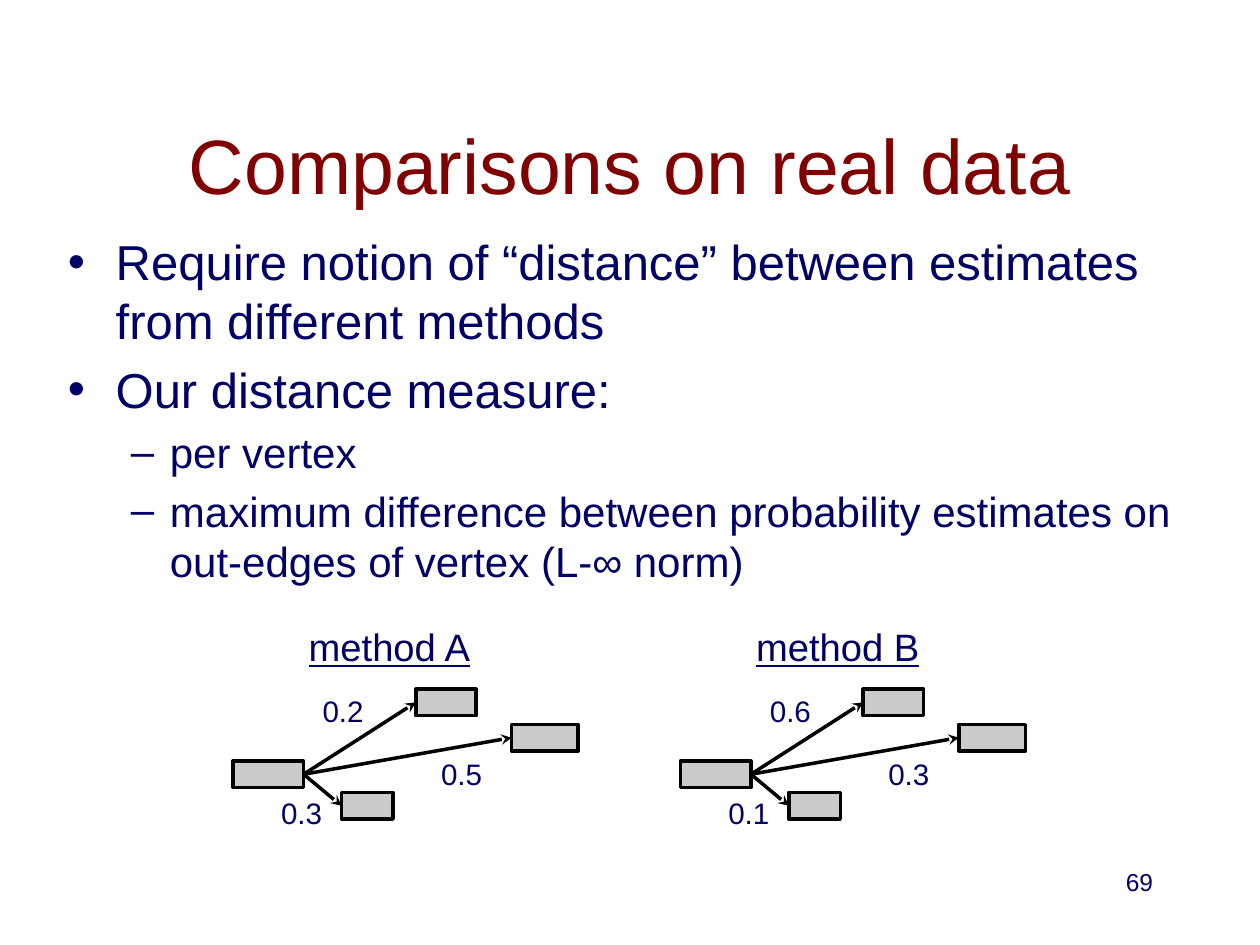
from pptx import Presentation
from pptx.dml.color import RGBColor
from pptx.enum.shapes import MSO_CONNECTOR, MSO_SHAPE
from pptx.enum.text import MSO_ANCHOR, PP_ALIGN
from pptx.oxml.ns import qn
from pptx.util import Inches, Pt
from lxml import etree

RECTANGLE = MSO_SHAPE.RECTANGLE
STRAIGHT = MSO_CONNECTOR.STRAIGHT
MIDDLE, BOTTOM, TOP = MSO_ANCHOR.MIDDLE, MSO_ANCHOR.BOTTOM, MSO_ANCHOR.TOP
LEFT, CENTER, RIGHT = PP_ALIGN.LEFT, PP_ALIGN.CENTER, PP_ALIGN.RIGHT
LEFT_SIDE, RIGHT_SIDE = 1, 3

MAROON = RGBColor(0x80, 0x00, 0x00)
NAVY = RGBColor(0x00, 0x00, 0x66)
GREY = RGBColor(0xCB, 0xCB, 0xCB)
BLACK = RGBColor(0x00, 0x00, 0x00)
WHITE = RGBColor(0xFF, 0xFF, 0xFF)

# Bullet levels: character, text indent, hanging indent, size
LEVELS = [("•", 0.38, 0.38, 28), ("–", 0.81, 0.31, 24)]
BULLETS = [
    (0, "Require notion of “distance” between estimates from different methods"),
    (0, "Our distance measure:"),
    (1, "per vertex"),
    (1, "maximum difference between probability estimates on "
        "out-edges of vertex (L-∞ norm)"),
]

# Graph parts, relative to the top left corner of the graph
VERTEX_HEIGHT = 0.21
SOURCE_VERTEX = (0, 1.14, 0.56)
TARGET_VERTICES = [(1.45, 0.57, 0.48), (2.21, 0.85, 0.53), (0.86, 1.39, 0.41)]
ESTIMATE_SPOTS = [(0.67, 0.56), (1.61, 1.06), (0.34, 1.37)]
GRAPHS = [
    (1.85, "method A", ["0.2", "0.5", "0.3"]),
    (5.4, "method B", ["0.6", "0.3", "0.1"]),
]
GRAPH_TOP = 4.9


def add_span(para, text, size, color=NAVY, underline=None):
    span = para.add_run()
    span.text = text
    span.font.color.rgb = color
    formats = {"name": "Arial", "size": Pt(size), "underline": underline}
    for name, value in formats.items():
        setattr(span.font, name, value)


def add_frame(shapes, box, anchor=TOP, wrap=True, margin=None):
    frame = shapes.add_textbox(*map(Inches, box)).text_frame
    formats = {"word_wrap": wrap, "vertical_anchor": anchor}
    if margin is not None:
        for side in ("left", "top", "right", "bottom"):
            formats[f"margin_{side}"] = Inches(margin)
    for name, value in formats.items():
        setattr(frame, name, value)
    return frame


def add_line_of_text(shapes, box, text, size, align=LEFT, color=NAVY,
                     underline=None, **frame_formats):
    para = add_frame(shapes, box, **frame_formats).paragraphs[0]
    para.alignment = align
    add_span(para, text, size, color, underline)


def add_bullets(page, box):
    frame = add_frame(page.shapes, box)
    for index, (level, text) in enumerate(BULLETS):
        para = frame.add_paragraph() if index else frame.paragraphs[0]
        mark, indent, hanging, size = LEVELS[level]
        para.level = level
        para.space_before = Pt(size * 0.2)
        properties = para._p.get_or_add_pPr()
        properties.set("marL", str(Inches(indent)))
        properties.set("indent", str(-Inches(hanging)))
        etree.SubElement(properties, qn("a:buFont")).set("typeface", "Arial")
        etree.SubElement(properties, qn("a:buChar")).set("char", mark)
        add_span(para, text, size)


def add_vertex(shapes, left, top, width):
    vertex = shapes.add_shape(RECTANGLE, *map(Inches, (left, top, width, VERTEX_HEIGHT)))
    vertex.shadow.inherit = False
    vertex.fill.solid()
    vertex.fill.fore_color.rgb = GREY
    vertex.line.color.rgb = BLACK
    vertex.line.width = Pt(2)
    return vertex


def add_edge(shapes, source, target):
    edge = shapes.add_connector(STRAIGHT, 0, 0, 0, 0)
    edge.begin_connect(source, RIGHT_SIDE)
    edge.end_connect(target, LEFT_SIDE)
    edge.line.color.rgb = BLACK
    edge.line.width = Pt(2)
    etree.SubElement(edge.line._get_or_add_ln(), qn("a:tailEnd")).set("type", "stealth")
    etree.SubElement(edge._element.spPr, qn("a:effectLst"))


def add_graph(page, left, top, method, estimates):
    shapes = page.shapes.add_group_shape().shapes
    label_format = {"anchor": BOTTOM, "wrap": False, "margin": 0.04}

    # Vertices and out-edges
    x, y, width = SOURCE_VERTEX
    source = add_vertex(shapes, left + x, top + y, width)
    for x, y, width in TARGET_VERTICES:
        target = add_vertex(shapes, left + x, top + y, width)
        add_edge(shapes, source, target)

    # Probability estimates and heading
    for (x, y), estimate in zip(ESTIMATE_SPOTS, estimates):
        add_line_of_text(shapes, (left + x, top + y, 0.41, 0.36), estimate, 16.9,
                         **label_format)
    add_line_of_text(shapes, (left + 0.56, top, 1.42, 0.45), method, 21.8,
                     underline=True, **label_format)


def build_slide(deck):
    page = deck.slides.add_slide(deck.slide_layouts[6])
    page.background.fill.solid()
    page.background.fill.fore_color.rgb = WHITE

    # Title and bullets
    add_line_of_text(page.shapes, (0.75, 0.67, 8.5, 1.25), "Comparisons on real data",
                     44, CENTER, MAROON, anchor=MIDDLE)
    add_bullets(page, (0.44, 1.79, 9.12, 3.28))

    # One graph for each method
    for left, method, estimates in GRAPHS:
        add_graph(page, left, GRAPH_TOP, method, estimates)

    # Page number
    add_line_of_text(page.shapes, (7.17, 6.83, 2.08, 0.5), "69", 14, RIGHT)


def main():
    deck = Presentation()
    deck.slide_width, deck.slide_height = Inches(10), Inches(7.5)
    build_slide(deck)
    deck.save("out.pptx")


if __name__ == "__main__":
    main()
